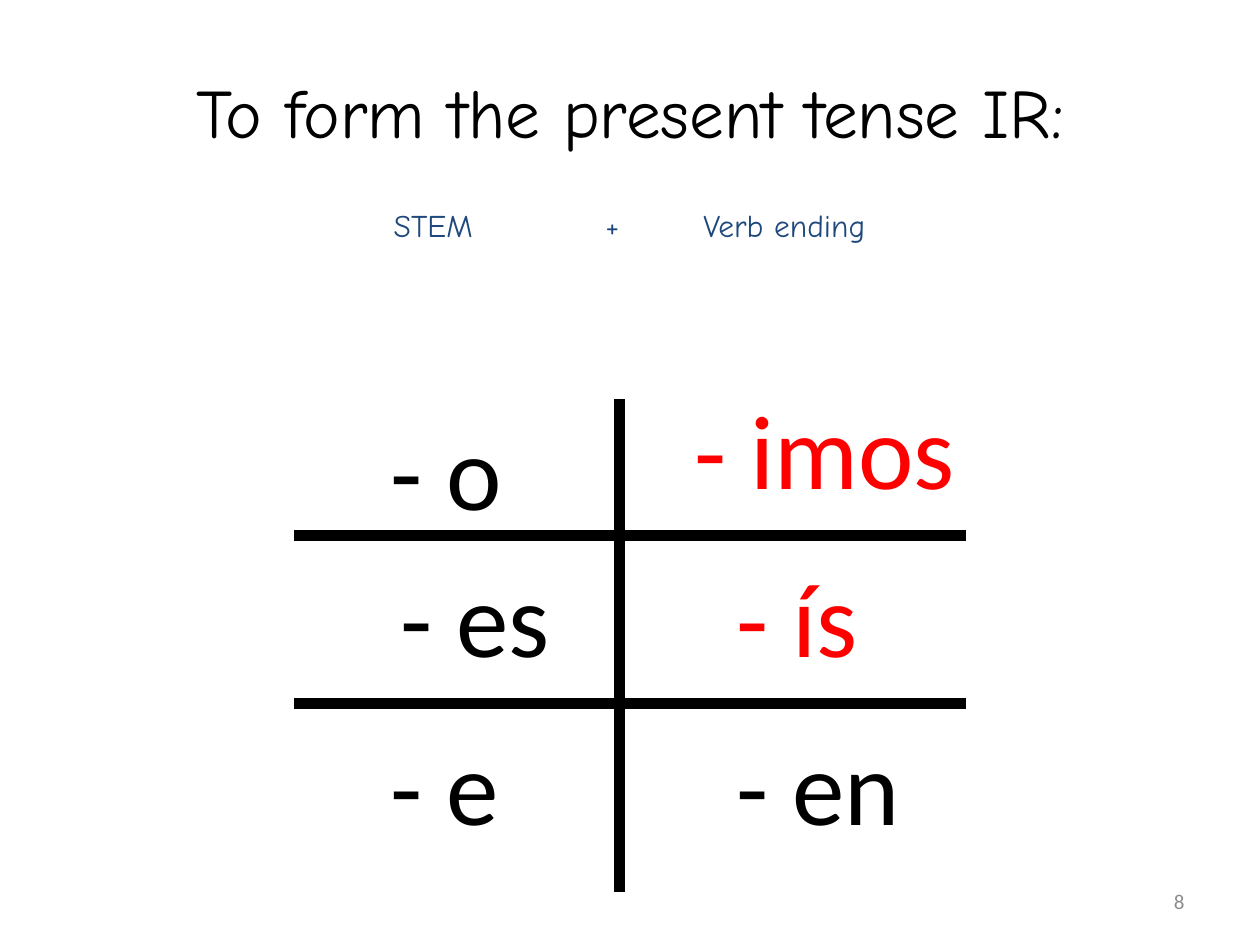
from lxml import etree
from pptx import Presentation
from pptx.dml.color import RGBColor
from pptx.enum.shapes import MSO_CONNECTOR
from pptx.enum.text import MSO_ANCHOR, PP_ALIGN
from pptx.oxml.ns import qn
from pptx.util import Pt

LEFT, CENTER, RIGHT = PP_ALIGN.LEFT, PP_ALIGN.CENTER, PP_ALIGN.RIGHT
TOP, MIDDLE = MSO_ANCHOR.TOP, MSO_ANCHOR.MIDDLE
STRAIGHT = MSO_CONNECTOR.STRAIGHT

COLORS = {"black": "000000", "red": "FF0000", "blue": "1F497D", "gray": "8C8C8C"}
HEADING_FONT, BODY_FONT = "Comic Neue", "Calibri"

# text, left, top, width, color
ENDINGS = [
    ("- o", 216, 228, 108, "black"),
    ("- es", 222, 312, 108, "black"),
    ("- e", 216, 408, 108, "black"),
    ("- imos", 390, 216, 228, "red"),
    ("- ís", 414, 312, 168, "red"),
    ("- en", 414, 408, 108, "black"),
]
GRID_LEFT, GRID_RIGHT, GRID_TOP, GRID_BOTTOM = 168, 552, 228, 510
GRID_COLUMN, GRID_ROWS = 354, (306, 402)


def add_text(slide, text, left, top, width, height, *, size, font=BODY_FONT,
             color="black", align=LEFT, anchor=TOP, inset=7.2, tabs=()):
    """Add a one-paragraph text box; tabs are measured from the left inset."""
    shape = slide.shapes.add_textbox(Pt(left), Pt(top), Pt(width), Pt(height))
    frame = shape.text_frame
    frame.word_wrap = True
    frame.vertical_anchor = anchor
    frame.margin_left = Pt(inset)
    paragraph = frame.paragraphs[0]
    paragraph.alignment = align
    run = paragraph.add_run()
    run.text = text
    run.font.size = Pt(size)
    run.font.name = font
    run.font.color.rgb = RGBColor.from_string(COLORS[color])
    if tabs:
        properties = paragraph._p.get_or_add_pPr()
        tab_list = etree.SubElement(properties, qn("a:tabLst"))
        for position in tabs:
            etree.SubElement(tab_list, qn("a:tab"), pos=str(Pt(position)), algn="l")


def add_line(slide, start_x, start_y, end_x, end_y):
    line = slide.shapes.add_connector(
        STRAIGHT, Pt(start_x), Pt(start_y), Pt(end_x), Pt(end_y))
    line.line.width = Pt(6)
    line.line.color.rgb = RGBColor.from_string(COLORS["black"])
    etree.SubElement(line._element.spPr, qn("a:effectLst"))


def add_grid(slide):
    add_line(slide, GRID_COLUMN, GRID_TOP, GRID_COLUMN, GRID_BOTTOM)
    for row in GRID_ROWS:
        add_line(slide, GRID_LEFT, row, GRID_RIGHT, row)


def main():
    presentation = Presentation()
    presentation.slide_width, presentation.slide_height = Pt(720), Pt(540)
    slide = presentation.slides.add_slide(presentation.slide_layouts[6])
    add_text(slide, "8", 516, 500.5, 168, 28.75, size=12, color="gray",
             align=RIGHT, anchor=MIDDLE)
    add_text(slide, "To form the present tense IR:", 54, 18, 612, 90, size=39.6,
             font=HEADING_FONT, align=CENTER, anchor=MIDDLE)
    add_text(slide, "STEM\t+\tVerb ending", 188, 114, 345.6, 36, size=18,
             font=HEADING_FONT, color="blue", inset=37, tabs=(121, 177))
    add_grid(slide)
    for text, left, top, width, color in ENDINGS:
        add_text(slide, text, left, top, width, 80, size=60, color=color)
    presentation.save("out.pptx")


if __name__ == "__main__":
    main()
